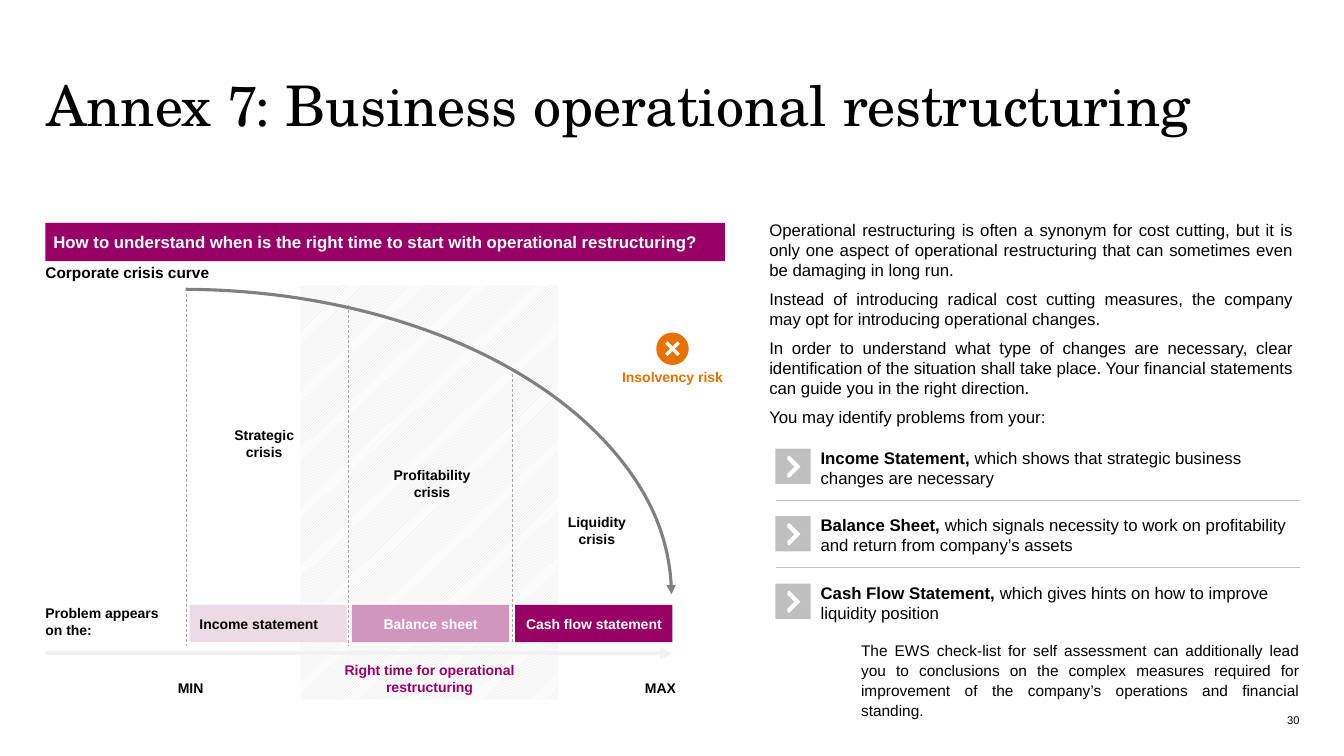
import math
from dataclasses import dataclass

import lxml.etree
import pptx
import pptx.dml.color
import pptx.enum.dml
import pptx.enum.shapes
import pptx.enum.text
import pptx.oxml.ns
import pptx.util

UNIT = 9144  # EMU in one px, 100 px to the inch
SHAPE = pptx.enum.shapes.MSO_SHAPE
ALIGN = {"l": pptx.enum.text.PP_ALIGN.LEFT, "c": pptx.enum.text.PP_ALIGN.CENTER,
         "r": pptx.enum.text.PP_ALIGN.RIGHT, "j": pptx.enum.text.PP_ALIGN.JUSTIFY}
ANCHOR = {"t": pptx.enum.text.MSO_ANCHOR.TOP, "m": pptx.enum.text.MSO_ANCHOR.MIDDLE,
          "b": pptx.enum.text.MSO_ANCHOR.BOTTOM}


@dataclass(frozen=True)
class Theme:
    head: str = "TeX Gyre Schola"
    body: str = "Arial"
    black: str = "000000"
    white: str = "FFFFFF"
    plum: str = "990066"
    rose: str = "D096BD"
    blush: str = "EADBE5"
    risk: str = "E57100"
    curve: str = "808080"
    dash: str = "A6A6A6"
    tile: str = "BFBFBF"
    hatch: str = "D9D9D9"
    pale: str = "F2F2F2"
    title: int = 40
    text: int = 12
    note: int = 11
    label: int = 10
    tiny: int = 8


T = Theme()


def px(n):
    return round(n * UNIT)


def rgb(code):
    return pptx.dml.color.RGBColor.from_string(code)


def place(box, x, y, w, h):
    """Turn a spot inside a box into slide lengths."""
    return px(box[0] + x), px(box[1] + y), px(w), px(h)


def write(shape, *paras, size=T.label, color=T.black, font=T.body, bold=False, lead="",
          align="l", anchor="m", pad=(0, 0), after=0, lines=None):
    """Fill a shape with paragraphs; lead is a bold start of each."""
    frame = shape.text_frame
    frame.word_wrap = True
    frame.vertical_anchor = ANCHOR[anchor]
    frame.margin_left = frame.margin_right = px(pad[0])
    frame.margin_top = frame.margin_bottom = px(pad[1])
    for i, words in enumerate(paras):
        para = frame.add_paragraph() if i else frame.paragraphs[0]
        para.alignment = ALIGN[align]
        para.space_after = pptx.util.Pt(after)
        if lines:
            para.line_spacing = lines
        for part, heavy in ((lead, True), (words, bold)):
            if part:
                run = para.add_run()
                run.text = part
                run.font.name, run.font.size = font, pptx.util.Pt(size)
                run.font.bold, run.font.color.rgb = heavy, rgb(color)


def label(slide, spot, *paras, **style):
    write(slide.shapes.add_textbox(*spot), *paras, **style)


def paint(shape, color):
    shape.shadow.inherit = False
    shape.fill.solid()
    shape.fill.fore_color.rgb = rgb(color)
    shape.line.fill.background()
    return shape


def block(slide, spot, color):
    return paint(slide.shapes.add_shape(SHAPE.RECTANGLE, *spot), color)


def stroke(shape, color, width, dash=False, arrow=False):
    shape.line.color.rgb = rgb(color)
    shape.line.width = pptx.util.Pt(width)
    if dash:
        shape.line.dash_style = pptx.enum.dml.MSO_LINE.DASH
    if arrow:
        edge = shape._element.spPr.find(pptx.oxml.ns.qn("a:ln"))
        lxml.etree.SubElement(edge, pptx.oxml.ns.qn("a:tailEnd"), type="triangle")


def rule(slide, box, x, y, dx, dy, color, width, **style):
    left, top, w, h = place(box, x, y, dx, dy)
    line = slide.shapes.add_connector(pptx.enum.shapes.MSO_CONNECTOR.STRAIGHT,
                                      left, top, left + w, top + h)
    stroke(line, color, width, **style)
    lxml.etree.SubElement(line._element.spPr, pptx.oxml.ns.qn("a:effectLst"))


def outline(slide, box, color, *loops):
    """Draw closed loops of points as one shape; inner loops are holes."""
    build = None
    for loop in loops:
        dots = [(px(box[0] + x), px(box[1] + y)) for x, y in loop]
        if build is None:
            build = slide.shapes.build_freeform(*dots[0])
        else:
            build.move_to(*dots[0])
        build.add_line_segments(dots[1:], close=True)
    return paint(build.convert_to_shape(), color)


def draw_risk(slide, box):
    ring = [(16 * math.cos(a), 16 * math.sin(a))
            for a in (math.tau * i / 72 for i in range(72))]
    cross, arm = [], [(7.5, 5), (5, 7.5), (0, 2.5)]
    for _ in range(4):
        cross += arm
        arm = [(-y, x) for x, y in arm]
    outline(slide, (box[0] + 85, box[1] - 15), T.risk, ring, cross)
    label(slide, place(box, 0, 0, 170, 27), "Insolvency risk", color=T.risk, bold=True,
          align="c", anchor="t", pad=(10, 5))


def draw_crisis(slide, box):
    band = block(slide, place(box, 253, 62, 256, 411), T.white)
    band.fill.patterned()
    band.fill.pattern = pptx.enum.dml.MSO_PATTERN.LIGHT_UPWARD_DIAGONAL
    band.fill.fore_color.rgb, band.fill.back_color.rgb = rgb(T.hatch), rgb(T.white)
    write(band, "Right time for operational restructuring", color=T.plum, bold=True,
          align="c", anchor="b", pad=(4, 4))

    write(block(slide, place(box, 0, 0, 674, 38), T.plum),
          "How to understand when is the right time to start with operational restructuring?",
          size=T.text, color=T.white, bold=True, pad=(8, 4))
    label(slide, place(box, 0, 40, 622, 19), "Corporate crisis curve", size=T.note,
          bold=True, anchor="t")
    label(slide, place(box, 0, 377, 125, 37), "Problem appears on the:", bold=True)

    stages = [("Income statement", T.blush, T.black, "l", 71, 349),
              ("Balance sheet", T.rose, T.white, "c", 82, 347),
              ("Cash flow statement", T.plum, T.white, "c", 150, 346)]
    for i, (name, fill, ink, align, top, foot) in enumerate(stages):
        x = 140 + i * 323 // 2
        bar = block(slide, place(box, x + 3, 379, 156, 37), fill)
        write(bar, name, color=ink, bold=True, align=align, pad=(10, 10))
        top, foot = [(71, 420), (82, 420), (150, 417)][i]
        rule(slide, box, x, top, 0, foot - top, T.dash, 0.5, dash=True)

    for name, x, y, w, h in [("Strategic crisis", 166, 196, 102, 46),
                             ("Profitability crisis", 320, 236, 127, 46),
                             ("Liquidity crisis", 499, 282, 96, 46),
                             ("MIN", 93, 449, 102, 24), ("MAX", 559, 449, 102, 24)]:
        label(slide, place(box, x, y, w, h), name, bold=True, align="c", pad=(10, 10))

    rule(slide, box, 0, 427, 622, 0, T.pale, 3, arrow=True)
    arc = slide.shapes.add_shape(SHAPE.ARC, *place(box, -350, 66, 971, 608))
    arc.shadow.inherit = False
    arc.fill.background()
    arc.adjustments[0], arc.adjustments[1] = 162.418, 215.901
    stroke(arc, T.curve, 2.25, arrow=True)
    draw_risk(slide, (box[0] + 537, box[1] + 140))


def draw_advice(slide, box):
    label(slide, place(box, 0, 0, 520, 207),
          "Operational restructuring is often a synonym for cost cutting, but it is only one "
          "aspect of operational restructuring that can sometimes even be damaging in long run.",
          "Instead of introducing radical cost cutting measures, the company may opt for "
          "introducing operational changes.",
          "In order to understand what type of changes are necessary, clear identification of "
          "the situation shall take place. Your financial statements can guide you in the "
          "right direction.",
          "You may identify problems from your:",
          size=T.text, align="j", anchor="t", after=6)

    chevron = [(0, 1), (1.5, 0), (3, 1), (13, 11), (3, 21), (1.5, 22), (0, 21),
               (0, 18), (7, 11), (0, 4)]
    signs = [("Income Statement, ", "which shows that strategic business changes are necessary"),
             ("Balance Sheet, ", "which signals necessity to work on profitability and return "
              "from company’s assets"),
             ("Cash Flow Statement, ", "which gives hints on how to improve liquidity position")]
    for i, (lead, words) in enumerate(signs):
        y = 227 + i * 67
        block(slide, place(box, 6, y, 35, 35), T.tile)
        outline(slide, (box[0] + 18, box[1] + y + 7), T.white, chevron)
        label(slide, place(box, 41, y - 6, 485, 50), words, lead=lead, size=T.text,
              anchor="t", pad=(10, 5))
        if i:
            rule(slide, box, 7, y - 16, 519, 0, T.tile, 0.25)

    label(slide, place(box, 91, 417, 435, 78),
          "The EWS check-list for self assessment can additionally lead you to conclusions on "
          "the complex measures required for improvement of the company’s operations and "
          "financial standing.",
          size=T.note, align="j", anchor="t", after=8, lines=1.07)


def main():
    deck = pptx.Presentation()
    deck.slide_width, deck.slide_height = px(1333), px(750)
    slide = deck.slides.add_slide(deck.slide_layouts[6])
    page = (0, 0)
    label(slide, place(page, 46, 36, 1243, 144), "Annex 7: Business operational restructuring",
          size=T.title, font=T.head, lines=0.9)
    draw_crisis(slide, (45, 221))
    draw_advice(slide, (763, 218))
    label(slide, place(page, 989, 708, 300, 13), "30", size=T.tiny, align="r")
    deck.save("out.pptx")


if __name__ == "__main__":
    main()
